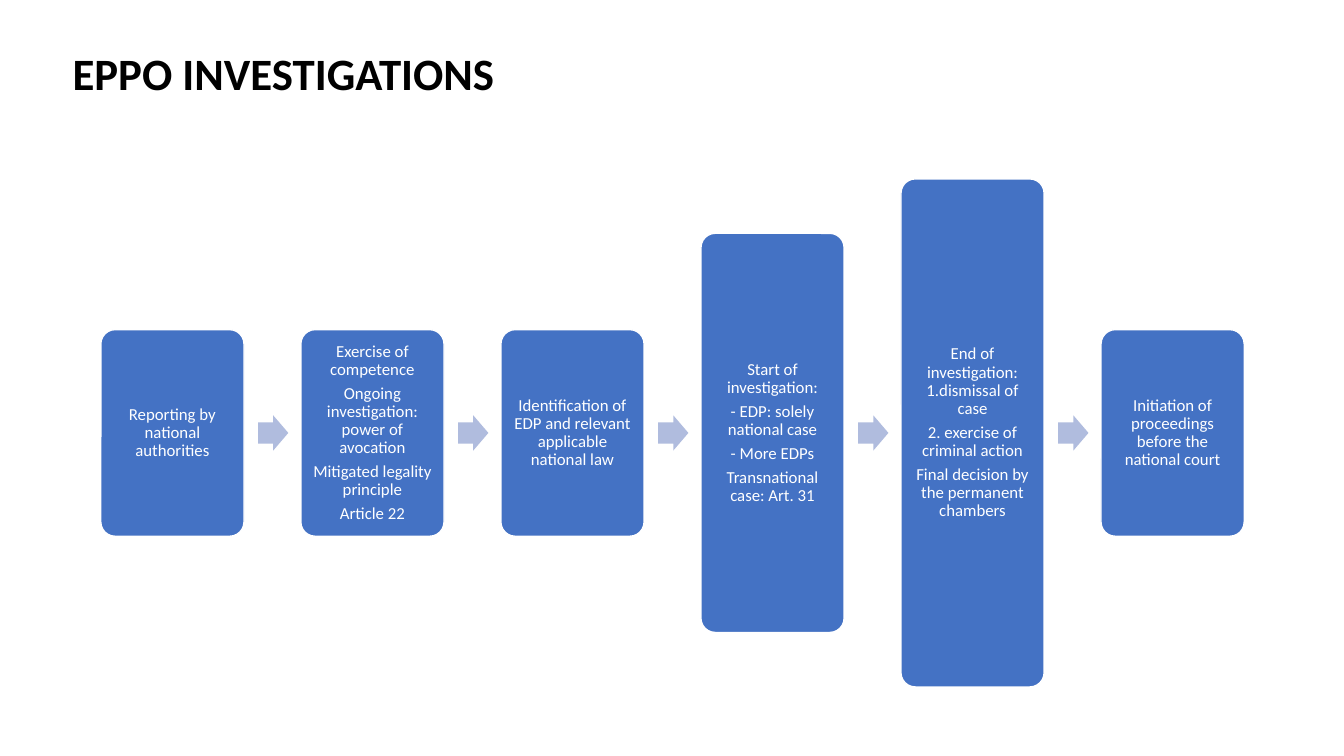
"""Build the EPPO investigations process slide."""
import dataclasses
import pptx
import pptx.dml.color
import pptx.enum.shapes
import pptx.enum.text
import pptx.util

Inches = pptx.util.Inches
Pt = pptx.util.Pt
KIND = pptx.enum.shapes.MSO_SHAPE
ALIGN = pptx.enum.text.PP_ALIGN
MIDDLE = pptx.enum.text.MSO_ANCHOR.MIDDLE

LEFT, WIDTH, STEP, CENTER = 1, 1.42, 9.92 / 5, 4.295
GAP, HEAD_W, HEAD_H = 0.14, 0.3, 0.35


@dataclasses.dataclass
class Stage:
    height: float
    lines: list[str]


STAGES = [
    Stage(2.05, ["Reporting by national authorities"]),
    Stage(2.05, ["Exercise of competence",
                 "Ongoing investigation: power of avocation",
                 "Mitigated legality principle",
                 "Article 22"]),
    Stage(2.05, ["Identification of EDP and relevant applicable national law"]),
    Stage(3.96, ["Start of investigation:",
                 "- EDP: solely national case",
                 "- More EDPs",
                 "Transnational case: Art. 31"]),
    Stage(5.04, ["End of investigation: 1.dismissal of case",
                 "2. exercise of criminal action",
                 "Final decision by the permanent chambers"]),
    Stage(2.05, ["Initiation of proceedings before the national court"]),
]

TITLE_FONT = {"name": "Calibri", "size": Pt(32), "bold": True}
STAGE_FONT = {"name": "Calibri", "size": Pt(12), "bold": False}
TITLE_PARA = {"alignment": ALIGN.LEFT, "line_spacing": 0.9}
STAGE_PARA = {"alignment": ALIGN.CENTER, "line_spacing": 0.9,
              "space_after": Pt(4.2)}


def color(code: str) -> pptx.dml.color.RGBColor:
    return pptx.dml.color.RGBColor.from_string(code)


def apply(target, values: dict) -> None:
    for name, value in values.items():
        setattr(target, name, value)


def write(shape, lines: list[str], font: dict, para: dict, ink: str,
          side: float, edge: float) -> None:
    frame = shape.text_frame
    apply(frame, {"word_wrap": True, "vertical_anchor": MIDDLE,
                  "margin_left": Inches(side), "margin_right": Inches(side),
                  "margin_top": Inches(edge), "margin_bottom": Inches(edge)})
    frame.text = "\n".join(lines)
    for item in frame.paragraphs:
        apply(item, para)
        for run in item.runs:
            apply(run.font, font)
            run.font.color.rgb = color(ink)


def block(slide, kind, left: float, width: float, height: float,
          fill: str, ratios: list[float]):
    shape = slide.shapes.add_shape(
        kind, Inches(left), Inches(CENTER - height / 2),
        Inches(width), Inches(height))
    shape.shadow.inherit = False
    shape.fill.solid()
    shape.fill.fore_color.rgb = color(fill)
    shape.line.fill.background()
    for index, ratio in enumerate(ratios):
        shape.adjustments[index] = ratio
    return shape


def main() -> None:
    deck = pptx.Presentation()
    apply(deck, {"slide_width": Inches(13.33), "slide_height": Inches(7.5)})
    slide = deck.slides.add_slide(deck.slide_layouts[6])
    title = slide.shapes.add_textbox(
        Inches(0.13), Inches(0.21), Inches(12.2), Inches(1.08))
    write(title, ["EPPO INVESTIGATIONS"], TITLE_FONT, TITLE_PARA,
          "000000", 0.59, 0)
    for index, stage in enumerate(STAGES):
        left = LEFT + index * STEP
        if index:
            block(slide, KIND.RIGHT_ARROW, left - STEP + WIDTH + GAP,
                  HEAD_W, HEAD_H, "B0BCDE", [0.6, 0.5])
        card = block(slide, KIND.ROUNDED_RECTANGLE, left, WIDTH,
                     stage.height, "4472C4", [0.1])
        card.line.color.rgb = color("FFFFFF")
        card.line.width = Pt(1)
        write(card, stage.lines, STAGE_FONT, STAGE_PARA, "FFFFFF", 0.05, 0.05)
    deck.save("out.pptx")


if __name__ == "__main__":
    main()
